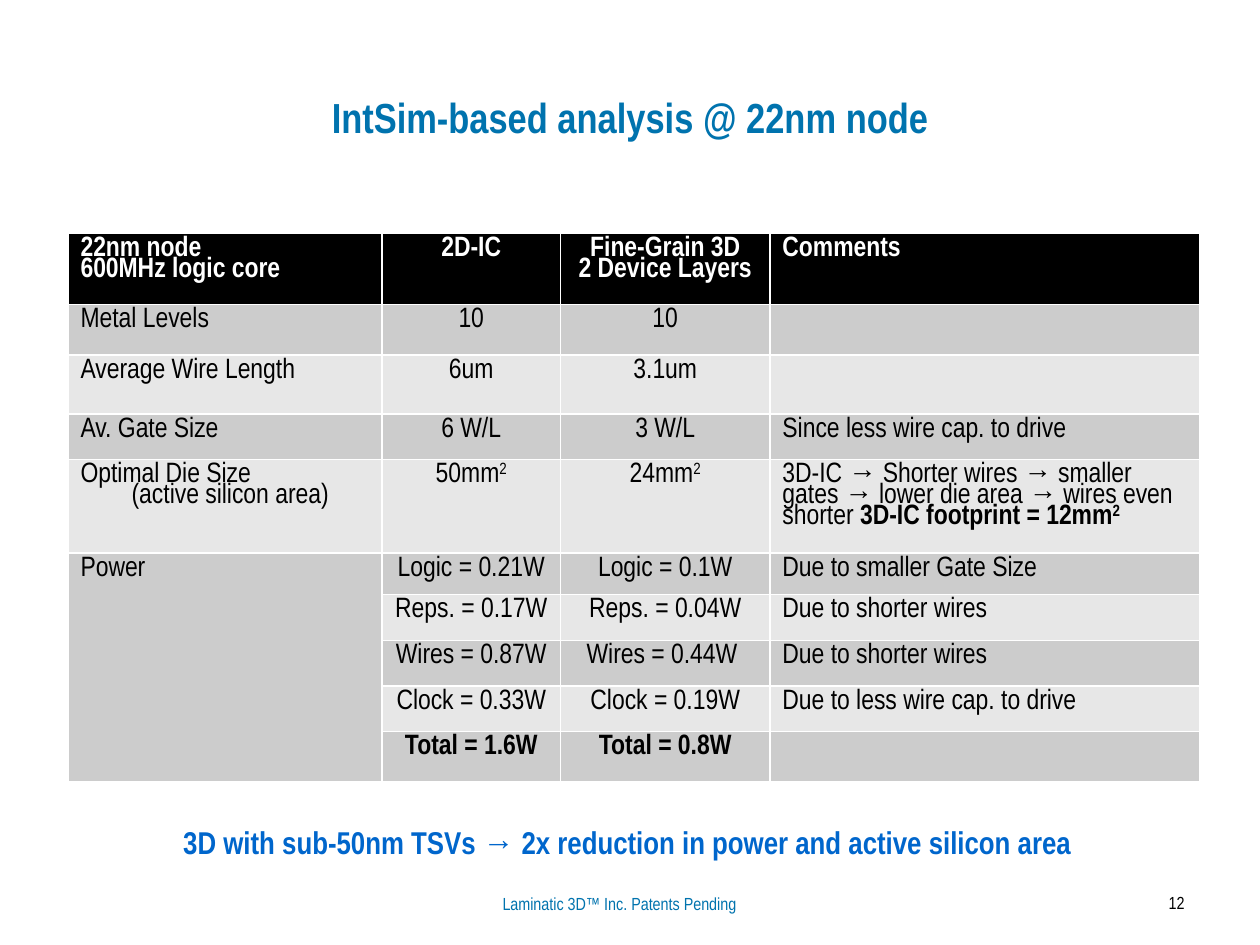
from pptx import Presentation
from pptx import util as u
from pptx.dml.color import RGBColor
from pptx.enum import text as t
from pptx.oxml import parse_xml
from pptx.oxml.ns import nsdecls

FACE = "Arial Narrow"
HUES = {"title": "0073AE", "claim": "0066CC", "ink": "000000", "head": "000000",
        "pale": "FFFFFF", "odd": "CCCCCC", "even": "E7E7E7"}
LEFT, MID, RIGHT = t.PP_ALIGN.LEFT, t.PP_ALIGN.CENTER, t.PP_ALIGN.RIGHT

TITLE = "IntSim-based analysis @ 22nm node"
CLAIM = "3D with sub-50nm TSVs → 2x reduction in power and active silicon area"
# Small print: words, box in cm, alignment, colour
NOTES = [
    ("Laminatic 3D™ Inc. Patents Pending", (8.46, 17.88, 8.05, 0.66), MID, "title"),
    ("12", (21.31, 17.86, 2.82, 0.84), RIGHT, "ink"),
]
# A cell is a string or a tuple of runs; "*" marks bold, "^" superscript
ROWS = [
    ("22nm node\n600MHz logic core", "2D-IC", "Fine-Grain 3D\n2 Device Layers", "Comments"),
    ("Metal Levels", "10", "10", ""),
    ("Average Wire Length", "6um", "3.1um", ""),
    ("Av. Gate Size", "6 W/L", "3 W/L", "Since less wire cap. to drive"),
    ("Optimal Die Size\v(active silicon area)", ("50mm", "^2"), ("24mm", "^2"),
     ("3D-IC → Shorter wires → smaller gates → lower die area → wires even shorter ",
      "*3D-IC footprint = 12mm", "*^2")),
    ("Power", "Logic = 0.21W", "Logic = 0.1W", "Due to smaller Gate Size"),
    ("", "Reps. = 0.17W", "Reps. = 0.04W", "Due to shorter wires"),
    ("", "Wires = 0.87W", "Wires = 0.44W ", "Due to shorter wires"),
    ("", "Clock = 0.33W", "Clock = 0.19W", "Due to less wire cap. to drive"),
    ("", "*Total = 1.6W", "*Total = 0.8W", ""),
]
WIDE = [6.33, 3.6, 4.22, 8.67]
HIGH = [1.43, 0.92, 1.19, 0.92, 1.85, 0.84, 0.92, 0.92, 0.92, 0.92]
SIDES = [LEFT, MID, MID, LEFT]
POWER = 5  # first row of the merged power block


def style(run, size, hue, bold=False):
    form = {"name": FACE, "size": u.Pt(size), "bold": bold}
    for key, val in form.items():
        setattr(run.font, key, val)
    run.font.color.rgb = RGBColor.from_string(HUES[hue])


def place(shape, box):
    for key, val in zip(("left", "top", "width", "height"), box):
        setattr(shape, key, u.Cm(val))


def write(shape, words, size, hue, side, bold=False):
    frame = shape.text_frame
    frame.word_wrap = True
    frame.text = words
    para = frame.paragraphs[0]
    para.alignment = side
    style(para.runs[0], size, hue, bold)
    return para


def hang(para, depth):
    """Indent every line but the first by depth, in cm."""
    props = para._p.get_or_add_pPr()
    props.set("marL", str(u.Cm(depth)))
    props.set("indent", str(-u.Cm(depth)))
    return props


def fill(cell, data, side, hue, head):
    """Write one cell, reading the bold and superscript marks of its runs."""
    cell.fill.solid()
    cell.fill.fore_color.rgb = RGBColor.from_string(HUES[hue])
    frame = cell.text_frame
    parts = [[p] for p in data.split("\n")] if isinstance(data, str) else [data]
    for n, runs in enumerate(parts):
        para = frame.add_paragraph() if n else frame.paragraphs[0]
        para.alignment = side
        para.line_spacing = 0.8
        for part in filter(None, runs):
            for k, line in enumerate(part.lstrip("*^").split("\v")):
                if k:
                    para.add_line_break()
                    hang(para, 1.03)
                run = para.add_run()
                run.text = line
                style(run, 16, "pale" if head else "ink", head or part[0] == "*")
                if "^" in part:
                    run._r.get_or_add_rPr().set("baseline", "30000")


def main():
    deck = Presentation()
    deck.slide_width, deck.slide_height = u.Cm(25.4), u.Cm(19.05)
    slide = deck.slides.add_slide(deck.slide_layouts[1])

    title, body = slide.placeholders
    place(title, (1.27, 0.76, 22.86, 3.18))
    title.text_frame.vertical_anchor = t.MSO_ANCHOR.MIDDLE
    write(title, TITLE, 24, "title", MID, True)

    place(body, (1.22, 16.46, 22.86, 1.32))
    para = write(body, CLAIM, 18, "claim", MID, True)
    hang(para, 0.97).append(parse_xml(f"<a:buNone {nsdecls('a')}/>"))
    para.space_before = u.Pt(0)

    for words, box, side, hue in NOTES:
        note = slide.shapes.add_textbox(*map(u.Cm, box))
        write(note, words, 10, hue, side)

    grid = slide.shapes.add_table(
        len(ROWS), len(WIDE), *map(u.Cm, (1.37, 4.71, sum(WIDE), sum(HIGH)))).table
    for col, wide in zip(grid.columns, WIDE):
        col.width = u.Cm(wide)
    for r, (row, high) in enumerate(zip(ROWS, HIGH)):
        grid.rows[r].height = u.Cm(high)
        hue = "odd" if r % 2 else "even"
        for c, data in enumerate(row):
            fill(grid.cell(r, c), data, SIDES[c], hue if r else "head", r == 0)
    grid.cell(POWER, 0).merge(grid.cell(len(ROWS) - 1, 0))

    deck.save("out.pptx")


if __name__ == "__main__":
    main()
